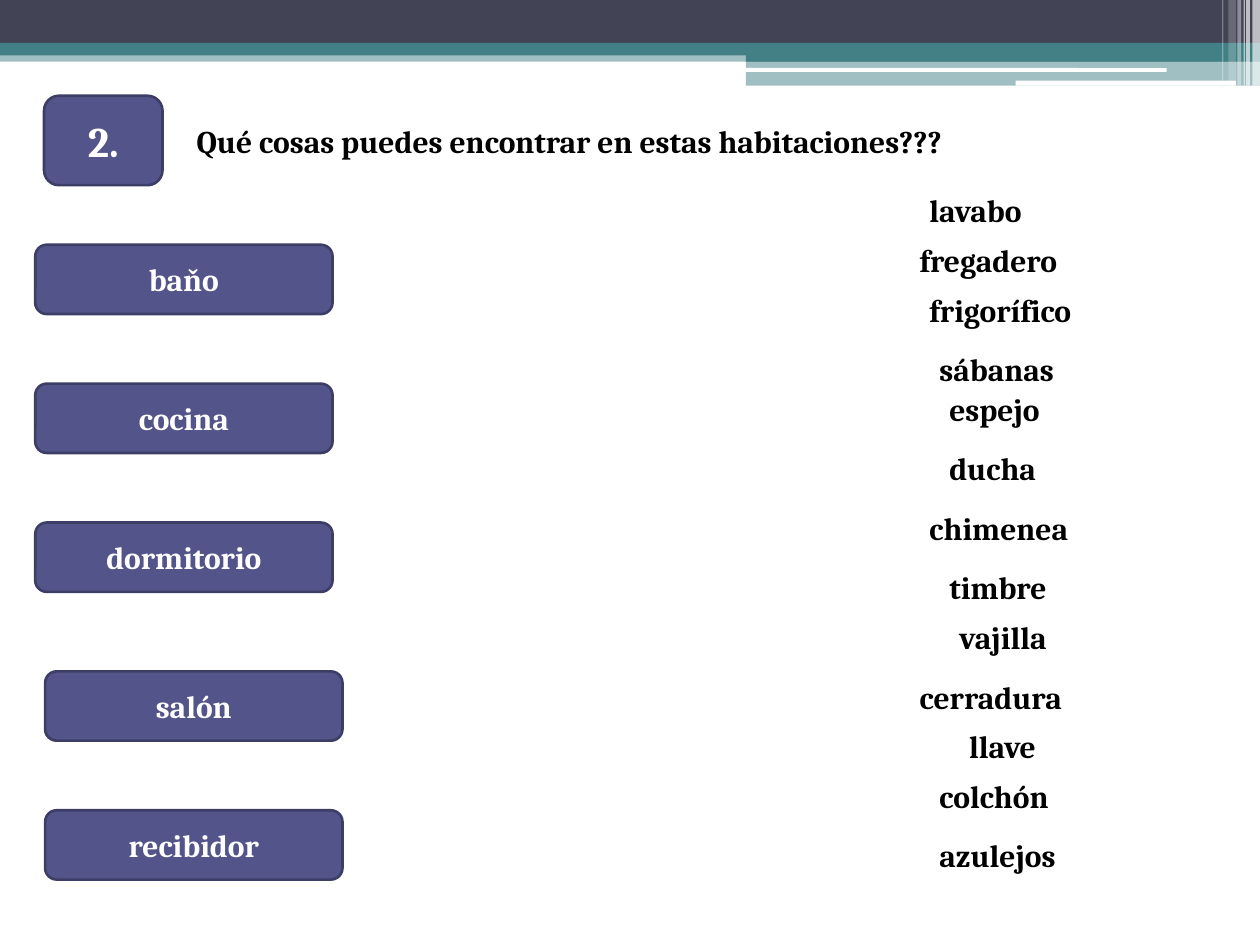
import pptx
import pptx.util
import pptx.dml.color
import pptx.enum.shapes
import pptx.enum.text
import pptx.oxml

RGB = pptx.dml.color.RGBColor
INK = RGB(0x00, 0x00, 0x00)
WHITE = RGB(0xFF, 0xFF, 0xFF)
SLATE = RGB(0x42, 0x44, 0x56)
TEAL = RGB(0x43, 0x80, 0x86)
VIOLET = RGB(0x53, 0x54, 0x8A)
EDGE = RGB(0x3D, 0x3E, 0x66)
NS = "http://schemas.openxmlformats.org/drawingml/2006/main"
KIND = pptx.enum.shapes.MSO_SHAPE
ALIGN = pptx.enum.text.PP_ALIGN
ANCHOR = pptx.enum.text.MSO_ANCHOR
FIT = pptx.enum.text.MSO_AUTO_SIZE
Inches = pptx.util.Inches

# Words and rooms sit on a fine grid of 0.2 cm, counted from the first word.
STEP = 0.2 / 2.54
TOP = 1.47


def add_block(kind, x, y, w, h, fill):
    block = slide.shapes.add_shape(kind, Inches(x), Inches(y), Inches(w), Inches(h))
    block.shadow.inherit = False
    block.fill.solid()
    block.fill.fore_color.rgb = fill
    block.line.fill.background()
    return block


def set_text(shape, text, size, color, align):
    frame = shape.text_frame
    frame.text = text
    para = frame.paragraphs[0]
    para.alignment = align
    para.font.name = "Cambria"
    para.font.size = pptx.util.Pt(size)
    para.font.bold = True
    para.font.color.rgb = color
    return frame


deck = pptx.Presentation()
deck.slide_width = Inches(10)
deck.slide_height = Inches(7.5)
slide = deck.slides.add_slide(deck.slide_layouts[5])

# Header bands and stripes: kind, left, top, width, height, fill, opacity in %
bands = [
    (KIND.RECTANGLE, 0, 0.4, 10, 0.09, TEAL, 50),
    (KIND.RECTANGLE, 0, 0, 10, 0.34, SLATE, 100),
    (KIND.RECTANGLE, 0, 0.34, 10, 0.1, TEAL, 100),
    (KIND.RECTANGLE, 5.92, 0.39, 4.08, 0.1, TEAL, 100),
    (KIND.RECTANGLE, 5.92, 0.48, 4.08, 0.2, TEAL, 50),
    (KIND.ROUNDED_RECTANGLE, 5.91, 0.54, 3.35, 0.03, WHITE, 100),
    (KIND.ROUNDED_RECTANGLE, 8.06, 0.64, 1.75, 0.04, WHITE, 100),
]
stripes = [
    (9.94, 0.06, 0.68, 65),
    (9.89, 0.03, 0.68, 65),
    (9.87, 0.01, 0.68, 60),
    (9.82, 0.03, 0.68, 40),
    (9.75, 0.06, 0.64, 20),
    (9.7, 0.01, 0.64, 30),
]
bands += [(KIND.RECTANGLE, x, 0, w, h, WHITE, part) for x, w, h, part in stripes]
for *place, part in bands:
    band = add_block(*place)
    if part < 100:
        tint = band.fill._xPr.find(f".//{{{NS}}}srgbClr")
        tint.append(pptx.oxml.parse_xml(f'<a:alpha xmlns:a="{NS}" val="{part * 1000}"/>'))

# Question
title = slide.shapes.title
title.left, title.top = Inches(1.46), Inches(0.92)
title.width, title.height = Inches(7.25), Inches(0.4)
frame = set_text(title, "Qué cosas puedes encontrar en estas habitaciones???", 18, INK, ALIGN.LEFT)
frame.vertical_anchor = ANCHOR.TOP
frame.word_wrap = False
frame.auto_size = FIT.SHAPE_TO_FIT_TEXT

# Number and rooms: text, size, left, top, width, height
boxes = [("2.", 24, 0.35, 0.76, 0.94, 0.71)]
rooms = [("baňo", 0, 6), ("cocina", 0, 20), ("dormitorio", 0, 34),
         ("salón", 1, 49), ("recibidor", 1, 63)]
boxes += [(room, 18, 0.28 + col * STEP, TOP + row * STEP, 2.36, 0.55)
          for room, col, row in rooms]
for text, size, *place in boxes:
    box = add_block(KIND.ROUNDED_RECTANGLE, *place, VIOLET)
    box.line.color.rgb = EDGE
    box.line.width = pptx.util.Pt(1.5)
    set_text(box, text, size, WHITE, ALIGN.CENTER).vertical_anchor = ANCHOR.MIDDLE

# Things to match: text, column, row, width
words = [
    ("lavabo", 1, 0, 1.06),
    ("fregadero", 0, 5, 1.48),
    ("frigorífico", 1, 10, 1.54),
    ("sábanas", 2, 16, 1.25),
    ("espejo", 3, 20, 1.03),
    ("ducha", 3, 26, 1),
    ("chimenea", 1, 32, 1.47),
    ("timbre", 3, 38, 1.09),
    ("vajilla", 4, 43, 1.18),
    ("cerradura", 0, 49, 1.51),
    ("llave", 5, 54, 0.82),
    ("colchón", 2, 59, 1.23),
    ("azulejos", 2, 65, 1.27),
]
for text, col, row, width in words:
    word = slide.shapes.add_textbox(Inches(7.2 + col * STEP), Inches(TOP + row * STEP),
                                    Inches(width), Inches(0.4))
    frame = set_text(word, text, 18, INK, ALIGN.LEFT)
    frame.word_wrap = text == "vajilla"
    frame.auto_size = FIT.SHAPE_TO_FIT_TEXT

deck.save("out.pptx")
